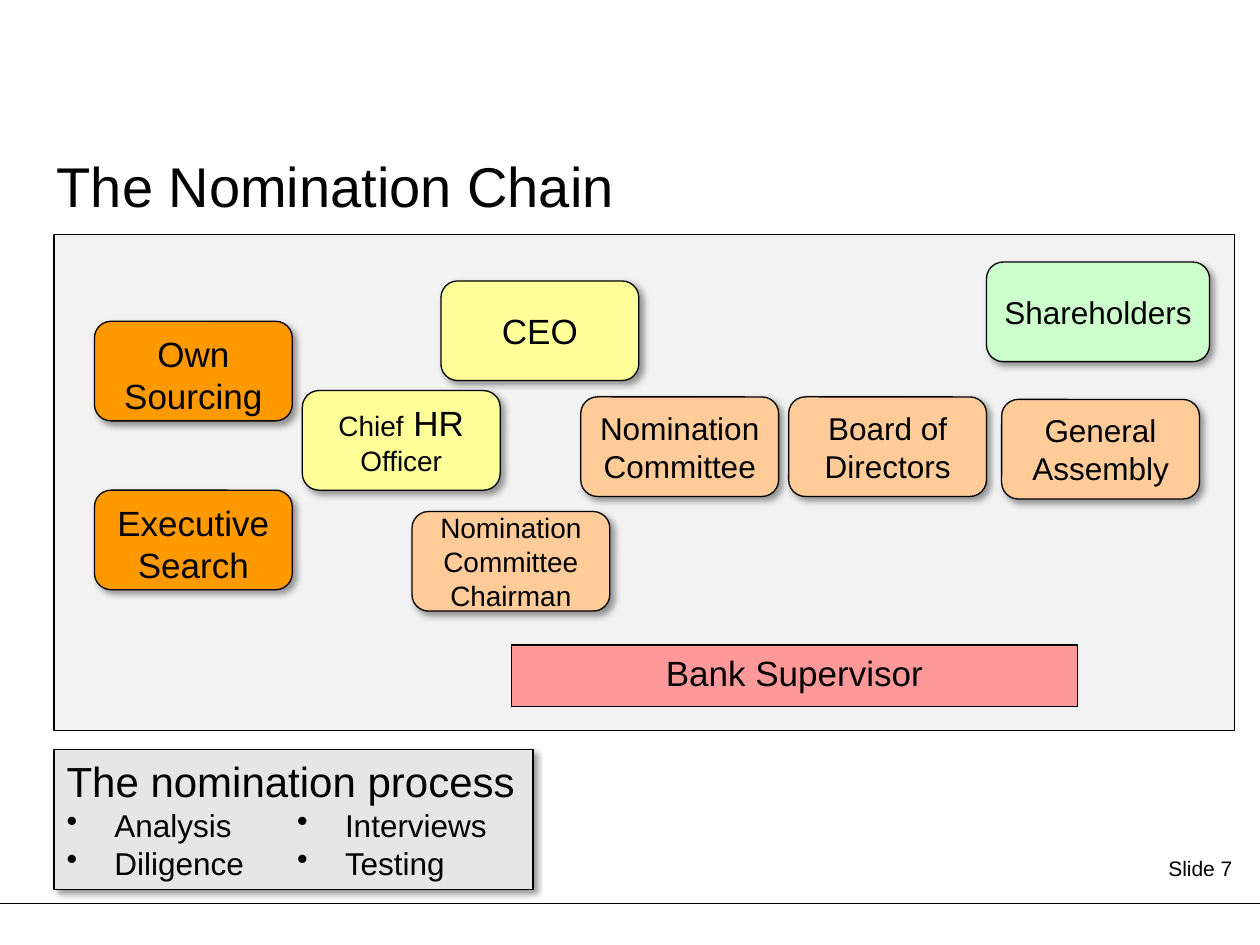
from lxml import etree
from pptx import Presentation
from pptx.dml.color import RGBColor
from pptx.enum import shapes, text
from pptx.oxml import parse_xml
from pptx.oxml.ns import nsdecls, qn
from pptx.util import Inches, Pt

THEME = {
    "font": "Arial",
    "ink": "000000",
    "panel": "F2F2F2",
    "process": "E6E6E6",
    "source": "FF9900",
    "executive": "FFFF99",
    "board": "FFCC99",
    "owner": "CCFFCC",
    "supervisor": "FF9999",
    "title": 32, "heading": 24, "large": 20, "medium": 18, "small": 16, "footer": 12,
}
TITLE = "The Nomination Chain"
FOOTER = "Slide 7"
CARD_WIDTH, CARD_HEIGHT = 1.57, 0.79
TOP, MIDDLE = text.MSO_ANCHOR.TOP, text.MSO_ANCHOR.MIDDLE
LEFT, CENTER, RIGHT = text.PP_ALIGN.LEFT, text.PP_ALIGN.CENTER, text.PP_ALIGN.RIGHT

# left, top, width, fill, anchor, paragraphs of (wording, size) runs
CARDS = [
    (0.75, 2.55, CARD_WIDTH, "source", TOP, [[("Own Sourcing", "large")]]),
    (0.75, 3.89, CARD_WIDTH, "source", TOP, [[("Executive", "large")], [("Search", "large")]]),
    (2.4, 3.1, CARD_WIDTH, "executive", TOP,
     [[("Chief", "small"), (" HR ", "large"), ("Officer", "small")]]),
    (3.5, 2.23, CARD_WIDTH, "executive", MIDDLE, [[("CEO", "large")]]),
    (3.27, 4.06, CARD_WIDTH, "board", MIDDLE, [[("Nomination Committee\nChairman", "small")]]),
    (4.61, 3.15, CARD_WIDTH, "board", MIDDLE, [[("Nomination Committee", "medium")]]),
    (6.26, 3.15, CARD_WIDTH, "board", MIDDLE, [[("Board of Directors", "medium")]]),
    (7.95, 3.17, CARD_WIDTH, "board", MIDDLE, [[("General Assembly", "medium")]]),
    (7.83, 2.08, 1.77, "owner", MIDDLE, [[("Shareholders", "medium")]]),
]
PROCESS_HEADING = [("The nomination process", "heading")]
PROCESS_STEPS = [["Analysis", "Diligence"], ["Interviews", "Testing"]]


def color(name):
    return RGBColor.from_string(THEME[name])


def place(shape, left, top, width, height):
    for name, value in {"left": left, "top": top, "width": width, "height": height}.items():
        setattr(shape, name, Inches(value))


def add_bullet(paragraph):
    properties = paragraph._p.get_or_add_pPr()
    properties.set("marL", str(Inches(0.38)))
    properties.set("indent", str(-Inches(0.38)))
    etree.SubElement(properties, qn("a:buChar")).set("char", "•")


def write(shape, paragraphs, align=LEFT, anchor=TOP, wrap=True, bullets_from=None):
    """Fill the frame; paragraphs from index bullets_from on get a bullet."""
    frame = shape.text_frame
    frame.word_wrap = wrap
    frame.vertical_anchor = anchor
    for index, runs in enumerate(paragraphs):
        paragraph = frame.add_paragraph() if index else frame.paragraphs[0]
        paragraph.alignment = align
        if bullets_from is not None and index >= bullets_from:
            add_bullet(paragraph)
        for wording, size in runs:
            for number, line in enumerate(wording.split("\n")):
                if number:
                    paragraph.add_line_break()
                run = paragraph.add_run()
                run.text = line
                for name, value in {"name": THEME["font"], "size": Pt(THEME[size])}.items():
                    setattr(run.font, name, value)
                run.font.color.rgb = color("ink")


def add_shadow(shape):
    shape._element.spPr.append(parse_xml(
        f'<a:effectLst {nsdecls("a")}><a:outerShdw blurRad="{Pt(4)}" dist="{Pt(3)}" '
        f'dir="2700000" algn="tl" rotWithShape="0"><a:srgbClr val="{THEME["ink"]}">'
        '<a:alpha val="40000"/></a:srgbClr></a:outerShdw></a:effectLst>'))


def add_box(slide, area, fill, rounded=False, shadow=False):
    kind = shapes.MSO_SHAPE.ROUNDED_RECTANGLE if rounded else shapes.MSO_SHAPE.RECTANGLE
    shape = slide.shapes.add_shape(kind, *map(Inches, area))
    shape.fill.solid()
    shape.fill.fore_color.rgb = color(fill)
    shape.line.color.rgb = color("ink")
    shape.line.width = Pt(0.75)
    if shadow:
        add_shadow(shape)
    else:
        shape.shadow.inherit = False
    return shape


def add_footer(slide):
    rule = slide.shapes.add_connector(
        shapes.MSO_CONNECTOR.STRAIGHT, *map(Inches, (0, 7.17, 10, 7.17)))
    rule.line.color.rgb = color("ink")
    rule.line.width = Pt(0.75)
    etree.SubElement(rule._element.spPr, qn("a:effectLst"))
    label = slide.shapes.add_textbox(*map(Inches, (8.62, 6.74, 1.26, 0.31)))
    write(label, [[(FOOTER, "footer")]], RIGHT)


def add_chain(slide):
    add_box(slide, (0.43, 1.86, 9.37, 3.94), "panel")
    for left, top, width, fill, anchor, paragraphs in CARDS:
        card = add_box(slide, (left, top, width, CARD_HEIGHT), fill, rounded=True, shadow=True)
        write(card, paragraphs, CENTER, anchor)
    supervisor = add_box(slide, (4.06, 5.12, 4.49, 0.49), "supervisor")
    write(supervisor, [[("Bank Supervisor", "large")]], CENTER)


def add_process(slide):
    first, second = [[[(step, "medium")] for step in column] for column in PROCESS_STEPS]
    box = add_box(slide, (0.43, 5.95, 3.8, 1.11), "process", shadow=True)
    write(box, [PROCESS_HEADING] + first, wrap=False, bullets_from=1)
    column = slide.shapes.add_textbox(*map(Inches, (2.26, 6.35, 1.72, 0.71)))
    write(column, second, wrap=False, bullets_from=0)


def main():
    presentation = Presentation()
    presentation.slide_width, presentation.slide_height = Inches(10), Inches(7.5)
    slide = presentation.slides.add_slide(presentation.slide_layouts[5])
    place(slide.shapes.title, 0.35, 1.07, 8.43, 0.79)
    write(slide.shapes.title, [[(TITLE, "title")]], anchor=MIDDLE)
    add_footer(slide)
    add_chain(slide)
    add_process(slide)
    presentation.save("out.pptx")


if __name__ == "__main__":
    main()
